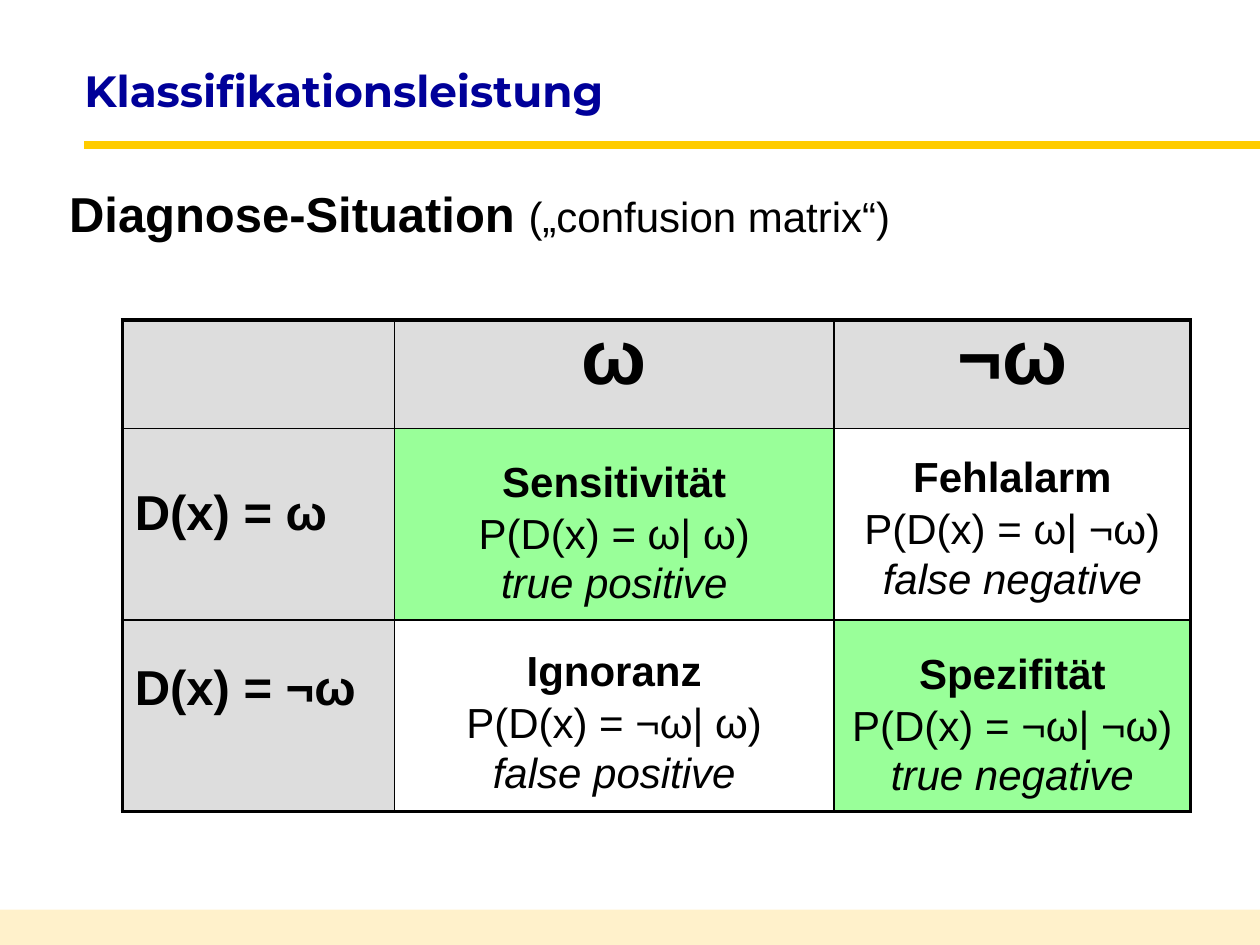
"""Build the slide on classification performance with its confusion matrix."""
from lxml import etree
from pptx import Presentation
from pptx.dml.color import RGBColor
from pptx.enum import shapes, text
from pptx.oxml import ns
from pptx.util import Inches, Pt

BLACK = RGBColor(0x00, 0x00, 0x00)
NAVY = RGBColor(0x00, 0x00, 0x99)
YELLOW = RGBColor(0xFF, 0xCC, 0x00)
CREAM = RGBColor(0xFF, 0xE4, 0x99)
GREY = RGBColor(0xDD, 0xDD, 0xDD)
GREEN = RGBColor(0x99, 0xFF, 0x99)

TITLE = "Klassifikationsleistung"
SUBTITLE = [("Diagnose-Situation ", {"size": Pt(28), "bold": True}),
            ("(„confusion matrix“)", {"size": Pt(24)})]
CLASSES = ["ω", "¬ω"]
DECISIONS = [("D(x) = ω", 1.95), ("D(x) = ¬ω", 1.65)]
OUTCOMES = [
    [(("Sensitivität", "P(D(x) = ω| ω)", "true positive"), 1.35),
     (("Fehlalarm", "P(D(x) = ω| ¬ω)", "false negative"), 1.15)],
    [(("Ignoranz", "P(D(x) = ¬ω| ω)", "false positive"), 1.25),
     (("Spezifität", "P(D(x) = ¬ω| ¬ω)", "true negative"), 1.35)],
]
COLUMN_WIDTHS = [2.16, 3.49, 2.83]
ROW_HEIGHTS = [0.86, 1.52, 1.52]
OUTER, INNER = Pt(2.25), Pt(1)

HEADER = {"size": Pt(44), "bold": True}
DECISION = {"size": Pt(28), "bold": True}
OUTCOME_LINES = [{"size": Pt(24), "bold": True},
                 {"size": Pt(24), "bold": False},
                 {"size": Pt(24), "italic": True}]


def add_run(paragraph, words, values, color=BLACK, font="Arial"):
    run = paragraph.add_run()
    run.text = words
    run.font.color.rgb = color
    for name, value in {"name": font, **values}.items():
        setattr(run.font, name, value)


def add_box(slide, left, top, width, height, **frame_values):
    frame = slide.shapes.add_textbox(*map(Inches, (left, top, width, height))).text_frame
    for name, value in {"word_wrap": True, **frame_values}.items():
        setattr(frame, name, value)
    return frame.paragraphs[0]


def set_borders(cell, widths):
    properties = cell._tc.get_or_add_tcPr()
    for side, width in zip("LRTB", widths):
        line = etree.SubElement(properties, ns.qn(f"a:ln{side}"), w=str(width))
        fill = etree.SubElement(line, ns.qn("a:solidFill"))
        etree.SubElement(fill, ns.qn("a:srgbClr"), val=str(BLACK))


def fill_cell(cell, lines, formats, spacings, align):
    for index, (words, values, spacing) in enumerate(zip(lines, formats, spacings)):
        frame = cell.text_frame
        paragraph = frame.add_paragraph() if index else frame.paragraphs[0]
        paragraph.alignment = align
        paragraph.line_spacing = spacing
        if index:
            paragraph.space_before = Pt(10.8)
        add_run(paragraph, words, values)


def add_matrix(slide):
    table = slide.shapes.add_table(
        len(ROW_HEIGHTS), len(COLUMN_WIDTHS), Inches(0.97), Inches(2.54),
        Inches(sum(COLUMN_WIDTHS)), Inches(sum(ROW_HEIGHTS))).table
    table.first_row = table.horz_banding = False
    for column, width in zip(table.columns, COLUMN_WIDTHS):
        column.width = Inches(width)
    last_row, last_column = len(ROW_HEIGHTS) - 1, len(COLUMN_WIDTHS) - 1
    for r, height in enumerate(ROW_HEIGHTS):
        table.rows[r].height = Inches(height)
        for c in range(len(COLUMN_WIDTHS)):
            cell = table.cell(r, c)
            edges = (c == 0, c == last_column, r == 0, r == last_row)
            set_borders(cell, [OUTER if edge else INNER for edge in edges])
            if r == 0 or c == 0 or r == c:
                cell.fill.solid()
                cell.fill.fore_color.rgb = GREEN if r and c else GREY
            else:
                cell.fill.background()

    center, left = text.PP_ALIGN.CENTER, text.PP_ALIGN.LEFT
    for c, label in enumerate(CLASSES, 1):
        fill_cell(table.cell(0, c), [label], [HEADER], [0.85], center)
    for r, ((label, spacing), outcomes) in enumerate(zip(DECISIONS, OUTCOMES), 1):
        fill_cell(table.cell(r, 0), [label], [DECISION], [spacing], left)
        for c, (lines, first_spacing) in enumerate(outcomes, 1):
            cell = table.cell(r, c)
            cell.vertical_anchor = text.MSO_ANCHOR.MIDDLE
            fill_cell(cell, lines, OUTCOME_LINES, [first_spacing, 0.65, 0.65], center)


def add_decoration(slide):
    footer = slide.shapes.add_shape(
        shapes.MSO_SHAPE.RECTANGLE, *map(Inches, (0, 7.22, 10, 0.28)))
    footer.shadow.inherit = False
    footer.fill.solid()
    footer.fill.fore_color.rgb = CREAM
    footer.line.fill.background()
    color = footer.fill._xPr.find(f".//{ns.qn('a:srgbClr')}")
    etree.SubElement(color, ns.qn("a:alpha"), val="50000")

    rule = slide.shapes.add_connector(
        shapes.MSO_CONNECTOR.STRAIGHT, *map(Inches, (0.67, 1.15, 10, 1.15)))
    rule.line.color.rgb = YELLOW
    rule.line.width = Pt(4.5)
    etree.SubElement(rule._element.spPr, ns.qn("a:effectLst"))


def main():
    deck = Presentation()
    deck.slide_width, deck.slide_height = Inches(10), Inches(7.5)
    slide = deck.slides.add_slide(deck.slide_layouts[6])
    add_decoration(slide)
    title = add_box(slide, 0.67, 0.44, 7.24, 0.55, margin_left=0,
                    vertical_anchor=text.MSO_ANCHOR.MIDDLE)
    add_run(title, TITLE, {"size": Pt(25), "bold": True}, NAVY, "Montserrat")
    subtitle = add_box(slide, 0.45, 1.31, 9.22, 0.55, margin_top=Inches(0.1))
    subtitle.line_spacing = 1.1
    for words, values in SUBTITLE:
        add_run(subtitle, words, values)
    add_matrix(slide)
    deck.save("out.pptx")


if __name__ == "__main__":
    main()
